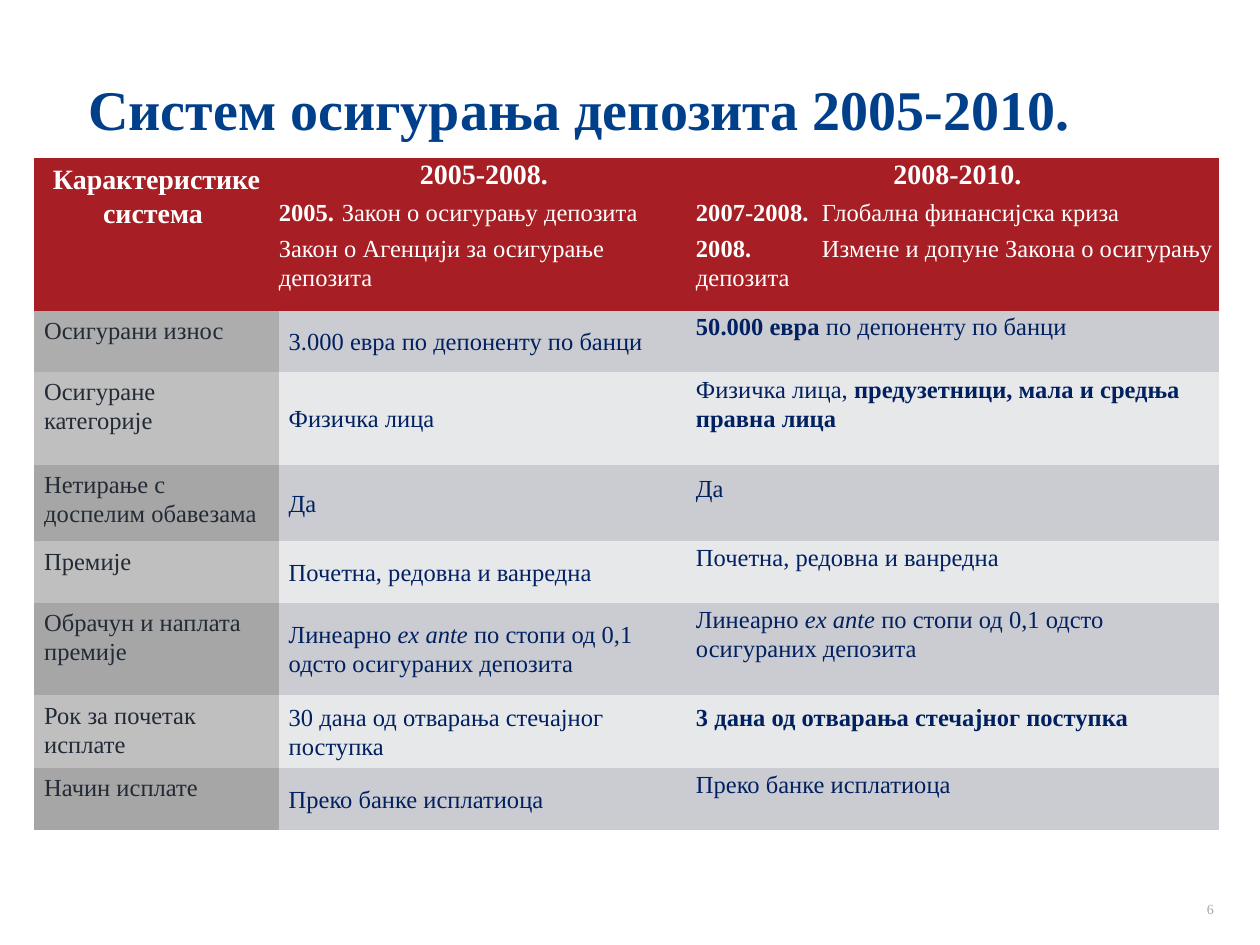
"""Build the slide comparing deposit insurance rules in 2005-2008 and 2008-2010."""
from lxml.etree import SubElement
from pptx import Presentation
from pptx.dml.color import RGBColor
from pptx.enum.text import MSO_ANCHOR as Anchor, PP_ALIGN as Align
from pptx.oxml.ns import qn
from pptx.util import Cm, Pt

FONT = "Times New Roman"
NO_STYLE = "{2D5ABB26-0587-4C30-8999-92F81FD0307C}"
BLUE = RGBColor(0x00, 0x3F, 0x8A)
NAVY = RGBColor(0x00, 0x20, 0x60)
SLATE = RGBColor(0x22, 0x2A, 0x35)
RED = RGBColor(0xA7, 0x1F, 0x24)
WHITE = RGBColor(0xFF, 0xFF, 0xFF)
GRAY = RGBColor(0xA6, 0xA6, 0xA6)
MID_GRAY = RGBColor(0xAD, 0xAD, 0xAD)
LIGHT_GRAY = RGBColor(0xBF, 0xBF, 0xBF)
BAND_DARK = RGBColor(0xCB, 0xCC, 0xD2)
BAND_LIGHT = RGBColor(0xE7, 0xE8, 0xEA)

TITLE = "Систем осигурања депозита 2005-2010."
PAGE_NUMBER = "6"
HEADERS = [
    ("Карактеристике система ", 0, []),
    ("2005-2008. ", 1.27, [
        [("2005. ", "b"), ("\tЗакон о осигурању депозита", "")],
        [("Закон о Агенцији за осигурање депозита", "")],
    ]),
    ("2008-2010.", 2.54, [
        [("2007-2008. ", "b"), ("\tГлобална финансијска криза", "")],
        [("2008. \t", "b"), ("Измене и допуне Закона о осигурању депозита", "")],
    ]),
]
LINEAR = [("Линеарно ", ""), ("еx ante ", "i"),
          ("по стопи од 0,1 одсто осигураних депозита", "")]
ROWS = [
    ("Осигурани износ", [("3.000 евра по депоненту по банци", "")],
     [("50.000 евра ", "b"), ("по депоненту по банци", "")], 1.2),
    ("Осигуране категорије", [("Физичка лица", "")],
     [("Физичка лица, ", ""), ("предузетници, мала и средња правна лица", "b")], 1.8),
    ("Нетирање с доспелим обавезама", [("Да", "")], [("Да", "")], 1.55),
    ("Премије", [("Почетна, редовна и ванредна", "")],
     [("Почетна, редовна и ванредна", "")], 1.2),
    ("Обрачун и наплата премије", LINEAR, LINEAR, 1.8),
    ("Рок за почетак исплате", [("30 дана од отварања стечајног поступка", "")],
     [("3 дана од отварања стечајног поступка", "b")], 1.4),
    ("Начин исплате", [("Преко банке исплатиоца", "")],
     [("Преко банке исплатиоца", "")], 1.2),
]
COLUMN_WIDTHS = [4.93, 8.41, 10.54]
HEADER_HEIGHT = 3.08
PADDED = (0.2, 0.1, 0.2, 0.1)
FLUSH = (0, 0, 0, 0)
LINE_BELOW = (0, 0, 0, 0.6)


def set_all(target, values):
    for name, value in values.items():
        setattr(target, name, value)


def add_runs(paragraph, runs, size, color, **layout):
    set_all(paragraph, layout)
    for text, style in runs:
        run = paragraph.add_run()
        run.text = text
        set_all(run.font, {"name": FONT, "size": Pt(size),
                           "bold": "b" in style, "italic": "i" in style})
        run.font.color.rgb = color


def add_tab_stop(paragraph, position):
    tabs = SubElement(paragraph._p.get_or_add_pPr(), qn("a:tabLst"))
    SubElement(tabs, qn("a:tab"), pos=str(Cm(position)), algn="l")


def format_cell(cell, fill, margins, anchor):
    cell.fill.solid()
    cell.fill.fore_color.rgb = fill
    sides = ("margin_left", "margin_top", "margin_right", "margin_bottom")
    set_all(cell, dict(zip(sides, map(Cm, margins))))
    cell.vertical_anchor = anchor


def add_text_box(slide, box, runs, size, color, anchor, align, side_margin):
    frame = slide.shapes.add_textbox(*map(Cm, box)).text_frame
    set_all(frame, {"word_wrap": True, "vertical_anchor": anchor,
                    "margin_left": Cm(side_margin), "margin_right": Cm(side_margin)})
    add_runs(frame.paragraphs[0], runs, size, color, alignment=align)


def fill_header(table):
    for column, (heading, tab, laws) in enumerate(HEADERS):
        cell = table.cell(0, column)
        format_cell(cell, RED, FLUSH if column else PADDED, Anchor.TOP)
        frame = cell.text_frame
        add_runs(frame.paragraphs[0], [(heading, "b")], 16, WHITE,
                 alignment=Align.CENTER, line_spacing=1.07)
        for law in laws:
            paragraph = frame.add_paragraph()
            paragraph.line_spacing = 1.07
            paragraph.space_before = Pt(3.9)
            add_tab_stop(paragraph, tab)
            add_runs(paragraph, law, 14, WHITE)


def fill_body(table):
    for index, (feature, before, after, height) in enumerate(ROWS):
        table.rows[index + 1].height = Cm(height)
        band = BAND_LIGHT if index % 2 else BAND_DARK
        label_fill = LIGHT_GRAY if index % 2 else GRAY if index else MID_GRAY
        cells = [
            ([(feature, "")], SLATE, label_fill, PADDED, Anchor.TOP),
            (before, NAVY, band, PADDED, Anchor.MIDDLE),
            (after, NAVY, band, LINE_BELOW, Anchor.MIDDLE),
        ]
        for column, (runs, color, fill, margins, anchor) in enumerate(cells):
            cell = table.cell(index + 1, column)
            format_cell(cell, fill, margins, anchor)
            add_runs(cell.text_frame.paragraphs[0], runs, 14, color, line_spacing=1.07)


def main():
    presentation = Presentation()
    set_all(presentation, {"slide_width": Cm(25.4), "slide_height": Cm(19.05)})
    slide = presentation.slides.add_slide(presentation.slide_layouts[6])
    add_text_box(slide, (1.27, 1.27, 22.35, 1.8), [(TITLE, "b")], 32, BLUE,
                 Anchor.MIDDLE, Align.LEFT, 0.51)
    add_text_box(slide, (18.8, 17.6, 5.92, 1.02), [(PAGE_NUMBER, "")], 8, GRAY,
                 Anchor.BOTTOM, Align.RIGHT, 0.25)

    table_height = HEADER_HEIGHT + sum(row[-1] for row in ROWS)
    size = (sum(COLUMN_WIDTHS), table_height)
    table = slide.shapes.add_table(len(ROWS) + 1, len(COLUMN_WIDTHS),
                                   *map(Cm, (0.69, 3.18, *size))).table
    table._tbl.tblPr.find(qn("a:tableStyleId")).text = NO_STYLE
    for column, width in zip(table.columns, COLUMN_WIDTHS):
        column.width = Cm(width)
    table.rows[0].height = Cm(HEADER_HEIGHT)
    fill_header(table)
    fill_body(table)
    presentation.save("out.pptx")


if __name__ == "__main__":
    main()
